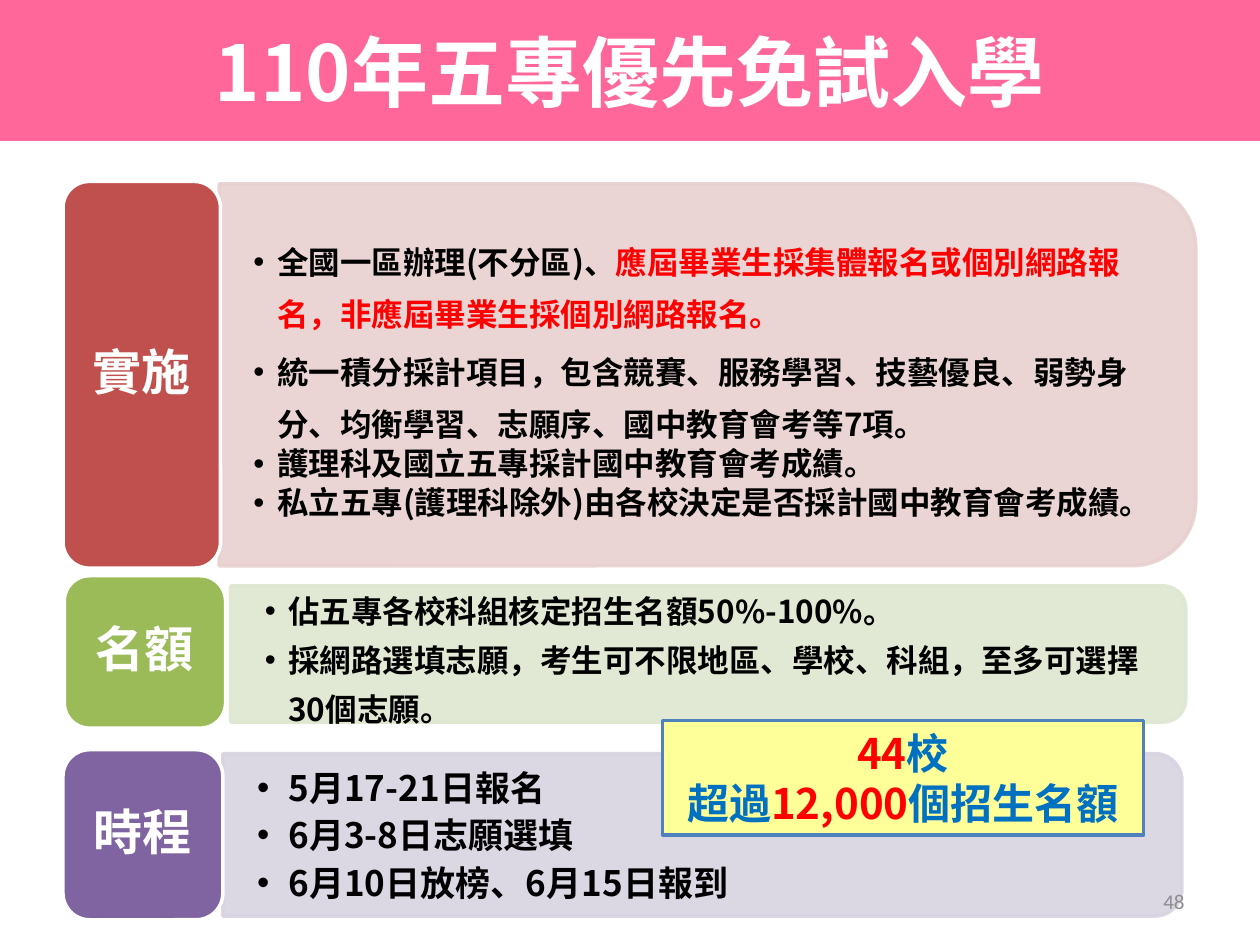
from dataclasses import dataclass

from lxml import etree
from pptx import Presentation
from pptx import util as u
from pptx.dml.color import RGBColor
from pptx.enum import shapes, text
from pptx.oxml.ns import qn

Pt = u.Pt


@dataclass(frozen=True)
class Theme:
    font: str = "Noto Sans CJK SC"
    number_font: str = "Calibri"
    banner: str = "FF6699"
    white: str = "FFFFFF"
    black: str = "000000"
    red: str = "FF0000"
    blue: str = "0070C0"
    grey: str = "8C8C8C"
    note_fill: str = "FFFF99"
    note_line: str = "4F81BD"
    title_size: float = 44
    label_size: float = 28
    note_size: float = 24
    number_size: float = 12


THEME = Theme()


@dataclass(frozen=True)
class Box:
    left: float
    top: float
    width: float
    height: float


@dataclass(frozen=True)
class Piece:
    words: str
    color: str = THEME.black


@dataclass(frozen=True)
class Item:
    pieces: tuple[Piece, ...]
    line_spacing: float | u.Length


@dataclass(frozen=True)
class Section:
    label: str
    label_box: Box
    label_fill: str
    panel_box: Box
    panel_fill: str
    items: tuple[Item, ...]
    size: float
    indent: float
    space_after: float


WIDE, MEDIUM, NARROW = Pt(30), Pt(28), Pt(24)

SECTIONS = (
    Section("實施", Box(36, 103.7, 90, 221), "C0504D",
            Box(125.3, 105.1, 558, 218.2), "E8D0D0",
            (Item((Piece("全國一區辦理(不分區)、"),
                   Piece("應屆畢業生採集體報名或個別網路報名，非應屆畢業生採個別網路報名。", THEME.red)), WIDE),
             Item((Piece("統一積分採計項目，包含競賽、服務學習、技藝優良、弱勢身分、"
                         "均衡學習、志願序、國中教育會考等7項。"),), WIDE),
             Item((Piece("護理科及國立五專採計國中教育會考成績。"),), 0.9),
             Item((Piece("私立五專(護理科除外)由各校決定是否採計國中教育會考成績。"),), 0.9)),
            18, 13.5, 3),
    Section("名額", Box(36.7, 329, 92.2, 87.1), "9BBB59",
            Box(131.8, 334.8, 545.8, 77.8), "DEE7D1",
            (Item((Piece("佔五專各校科組核定招生名額50%-100%。"),), MEDIUM),
             Item((Piece("採網路選填志願，考生可不限地區、學校、科組，至多可選擇30個志願。"),), MEDIUM)),
            18, 13.5, 0),
    Section("時程", Box(36, 428.4, 91.4, 97.2), "8064A2",
            Box(127.4, 430.6, 548, 92.9), "D8D3E0",
            (Item((Piece("5月17-21日報名"),), NARROW),
             Item((Piece("6月3-8日志願選填"),), NARROW),
             Item((Piece("6月10日放榜、6月15日報到"),), NARROW)),
            20, 18, 3),
)


def color(value: str) -> RGBColor:
    return RGBColor.from_string(value)


def set_font(font, size: float, value: str, bold: bool = True, name: str = THEME.font) -> None:
    font.size, font.bold, font.name = Pt(size), bold, name
    font.color.rgb = color(value)
    etree.SubElement(font._rPr, qn("a:ea"), typeface=name)


def place(shape, box: Box) -> None:
    shape.left, shape.top = Pt(box.left), Pt(box.top)
    shape.width, shape.height = Pt(box.width), Pt(box.height)


def set_frame(frame, horizontal: float, vertical: float) -> None:
    frame.word_wrap = True
    frame.auto_size = text.MSO_AUTO_SIZE.NONE
    frame.vertical_anchor = text.MSO_ANCHOR.MIDDLE
    frame.margin_left = frame.margin_right = Pt(horizontal)
    frame.margin_top = frame.margin_bottom = Pt(vertical)


def add_block(slide, kind, box: Box, fill: str, line: str):
    shape = slide.shapes.add_shape(kind, Pt(box.left), Pt(box.top), Pt(box.width), Pt(box.height))
    shape.shadow.inherit = False
    shape.fill.solid()
    shape.fill.fore_color.rgb = color(fill)
    shape.line.color.rgb = color(line)
    shape.line.width = Pt(2)
    return shape


def add_panel(slide, box: Box, fill: str):
    # A quarter turn about the centre puts the rounded corners on the right
    shift = (box.width - box.height) / 2
    turned = Box(box.left + shift, box.top - shift, box.height, box.width)
    panel = add_block(slide, shapes.MSO_SHAPE.ROUND_2_SAME_RECTANGLE, turned, fill, fill)
    panel.rotation = 90
    for solid in panel._element.spPr.iter(qn("a:srgbClr")):
        etree.SubElement(solid, qn("a:alpha"), val="90000")
    return panel


def add_pieces(paragraph, pieces: tuple[Piece, ...]) -> None:
    for piece in pieces:
        run = paragraph.add_run()
        run.text = piece.words
        if len(pieces) > 1:
            run.font.color.rgb = color(piece.color)


def fill_list(body, section: Section) -> None:
    box = section.panel_box
    inset = box.height * 0.049
    place(body, Box(box.left, box.top + inset, box.width - inset, box.height - 2 * inset))
    set_frame(body.text_frame, 19.5, 10)
    for index, item in enumerate(section.items):
        frame = body.text_frame
        paragraph = frame.add_paragraph() if index else frame.paragraphs[0]
        paragraph.line_spacing = item.line_spacing
        paragraph.space_before, paragraph.space_after = Pt(0), Pt(section.space_after)
        properties = paragraph._p.get_or_add_pPr()
        properties.set("marL", str(Pt(section.indent)))
        properties.set("indent", str(-Pt(section.indent)))
        etree.SubElement(properties, qn("a:buFont"), typeface="Arial")
        etree.SubElement(properties, qn("a:buChar"), char="•")
        set_font(paragraph.font, section.size, THEME.black)
        add_pieces(paragraph, item.pieces)


def add_section(slide, section: Section, body) -> None:
    panel = add_panel(slide, section.panel_box, section.panel_fill)
    fill_list(body, section)
    panel._element.addnext(body._element)
    label = add_block(slide, shapes.MSO_SHAPE.ROUNDED_RECTANGLE, section.label_box,
                      section.label_fill, THEME.white)
    set_frame(label.text_frame, 8.4, 4.2)
    paragraph = label.text_frame.paragraphs[0]
    paragraph.text = section.label
    paragraph.alignment = text.PP_ALIGN.CENTER
    paragraph.line_spacing, paragraph.space_after = 0.9, Pt(10)
    set_font(paragraph.font, THEME.label_size, THEME.white)


def main() -> None:
    presentation = Presentation()
    presentation.slide_width, presentation.slide_height = Pt(720), Pt(540)
    slide = presentation.slides.add_slide(presentation.slide_layouts.get_by_name("Comparison"))
    title, *bodies = slide.placeholders

    # Title banner
    place(title, Box(0, 0, 720, 80.6))
    title.fill.solid()
    title.fill.fore_color.rgb = color(THEME.banner)
    set_frame(title.text_frame, 7.2, 3.6)
    paragraph = title.text_frame.paragraphs[0]
    paragraph.text = "110年五專優先免試入學"
    paragraph.alignment = text.PP_ALIGN.CENTER
    set_font(paragraph.font, THEME.title_size, THEME.white)

    # Sections, then the placeholders left over
    for section, body in zip(SECTIONS, bodies):
        add_section(slide, section, body)
    for body in bodies[len(SECTIONS):]:
        body._element.getparent().remove(body._element)

    # Slide number
    number = slide.shapes.add_textbox(Pt(516), Pt(500.5), Pt(168), Pt(28.8))
    set_frame(number.text_frame, 7.2, 3.6)
    paragraph = number.text_frame.paragraphs[0]
    paragraph.text = "48"
    paragraph.alignment = text.PP_ALIGN.RIGHT
    set_font(paragraph.font, THEME.number_size, THEME.grey, False, THEME.number_font)

    # Places on offer
    note = add_block(slide, shapes.MSO_SHAPE.RECTANGLE, Box(378.5, 411.7, 275, 65.4),
                     THEME.note_fill, THEME.note_line)
    set_frame(note.text_frame, 7.2, 3.6)
    lines = ((Piece("44", THEME.red), Piece("校", THEME.blue)),
             (Piece("超過", THEME.blue), Piece("12,000", THEME.red), Piece("個招生名額", THEME.blue)))
    for index, pieces in enumerate(lines):
        paragraph = note.text_frame.add_paragraph() if index else note.text_frame.paragraphs[0]
        paragraph.alignment = text.PP_ALIGN.CENTER
        set_font(paragraph.font, THEME.note_size, THEME.blue)
        add_pieces(paragraph, pieces)

    presentation.save("out.pptx")


if __name__ == "__main__":
    main()
